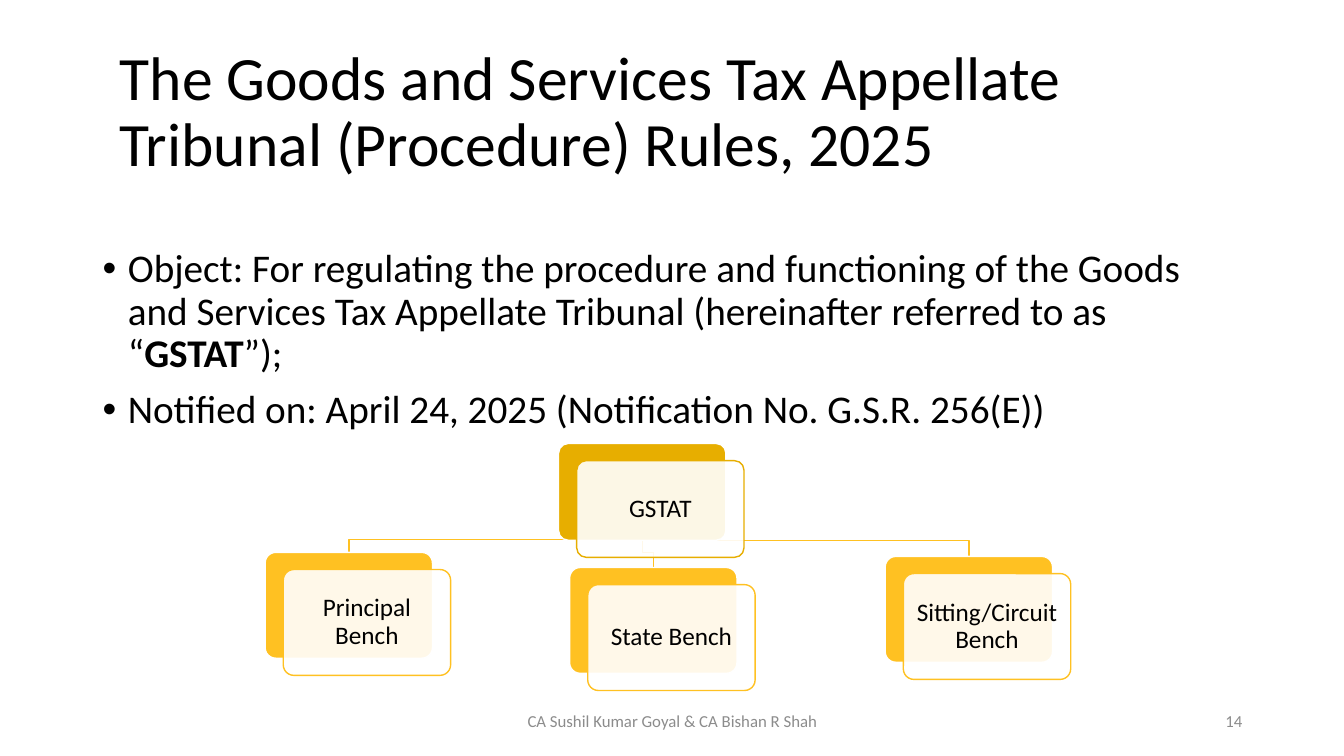
from lxml.etree import SubElement
from pptx import Presentation
from pptx.dml.color import RGBColor
from pptx.enum.shapes import MSO_SHAPE
from pptx.enum.text import MSO_ANCHOR, PP_ALIGN
from pptx.oxml.ns import qn
from pptx.util import Inches, Pt

PX = Inches(1) // 100
GOLD, AMBER, WHITE, BLACK, GREY = "E7AE00", "FFC122", "FFFFFF", "000000", "8C8C8C"
CARD_W, SHIFT_X, SHIFT_Y = 166, 18, 17
ROOT_X, ROOT_Y, ROOT_H = 554, 440, 96
BENCH_H = 105
# name, left, top, height of the link's bend
BENCHES = [
    ("Sitting/Circuit Bench", 878, 552, 536),
    ("State Bench", 565, 563, 548),
    ("Principal Bench", 263, 548, 535),
]
TITLE = "The Goods and Services Tax Appellate Tribunal (Procedure) Rules, 2025"
POINTS = [
    [("Object: For regulating the procedure and functioning of the Goods and "
      "Services Tax Appellate Tribunal (hereinafter referred to as “", False),
     ("GSTAT", True), ("”);", False)],
    [("Notified on: April 24, 2025 (Notification No. G.S.R. 256(E))", False)],
]


def rgb(code):
    return RGBColor.from_string(code)


def apply(target, **values):
    for name, value in values.items():
        setattr(target, name, value)


def write(para, runs, size, color=BLACK, **form):
    """Fill a paragraph with (text, bold) runs."""
    apply(para, **form)
    for text, bold in runs:
        run = para.add_run()
        run.text = text
        apply(run.font, name="Calibri", size=Pt(size), bold=bold)
        run.font.color.rgb = rgb(color)


def add_box(slide, x, y, w, h, **form):
    frame = slide.shapes.add_textbox(x * PX, y * PX, w * PX, h * PX).text_frame
    apply(frame, word_wrap=True, **form)
    return frame


def add_label(slide, box, text, size, color=BLACK, **form):
    frame = add_box(slide, *box, vertical_anchor=MSO_ANCHOR.MIDDLE)
    write(frame.paragraphs[0], [(text, False)], size, color, **form)


def add_points(slide):
    frame = add_box(slide, 92, 185, 1150, 287, margin_top=62 * PX)
    for i, runs in enumerate(POINTS):
        para = frame.add_paragraph() if i else frame.paragraphs[0]
        write(para, runs, 28, line_spacing=0.9, space_before=Pt(10 if i else 0))
        props = para._p.get_or_add_pPr()
        props.set("marL", str(25 * PX))
        props.set("indent", str(-25 * PX))
        SubElement(props, qn("a:buFont"), typeface="Arial")
        SubElement(props, qn("a:buChar"), char="•")


def add_plate(slide, x, y, h, fill, line):
    plate = slide.shapes.add_shape(
        MSO_SHAPE.ROUNDED_RECTANGLE, x * PX, y * PX, CARD_W * PX, h * PX)
    plate.adjustments[0] = 0.1
    plate.shadow.inherit = False
    plate.fill.solid()
    plate.fill.fore_color.rgb = rgb(fill)
    plate.line.color.rgb = rgb(line)
    plate.line.width = Pt(1)
    return plate


def add_card(slide, text, x, y, h, color):
    """Coloured plate with a translucent, labelled plate set off over it."""
    add_plate(slide, x, y, h, color, WHITE)
    front = add_plate(slide, x + SHIFT_X, y + SHIFT_Y, h, WHITE, color)
    tint = front.fill._xPr.find(qn("a:solidFill"))[0]
    SubElement(tint, qn("a:alpha"), val="90000")
    frame = front.text_frame
    sides = ("left", "top", "right", "bottom")
    apply(frame, word_wrap=True, vertical_anchor=MSO_ANCHOR.MIDDLE,
          **{f"margin_{side}": 7 * PX for side in sides})
    write(frame.paragraphs[0], [(text, False)], 18,
          alignment=PP_ALIGN.CENTER, line_spacing=0.9)


def add_link(slide, x, y, bend):
    """Elbow line from under the root card to the top of a bench card."""
    start, end = ROOT_X + CARD_W // 2, x + CARD_W // 2
    pen = slide.shapes.build_freeform(start, 535, scale=PX)
    pen.add_line_segments([(start, bend), (end, bend), (end, y)], close=False)
    link = pen.convert_to_shape()
    link.shadow.inherit = False
    link.fill.background()
    link.line.color.rgb = rgb(AMBER)
    link.line.width = Pt(1)


def main():
    deck = Presentation()
    apply(deck, slide_width=1333 * PX, slide_height=750 * PX)
    slide = deck.slides.add_slide(deck.slide_layouts[6])
    add_label(slide, (109, 40, 1133, 145), TITLE, 44, line_spacing=0.9)
    add_points(slide)
    for _, x, y, bend in BENCHES:
        add_link(slide, x, y, bend)
    add_card(slide, "GSTAT", ROOT_X, ROOT_Y, ROOT_H, GOLD)
    for name, x, y, _ in reversed(BENCHES):
        add_card(slide, name, x, y, BENCH_H, AMBER)
    add_label(slide, (442, 695, 450, 40), "CA Sushil Kumar Goyal & CA Bishan R Shah",
              12, GREY, alignment=PP_ALIGN.CENTER)
    add_label(slide, (942, 695, 300, 40), "14", 12, GREY, alignment=PP_ALIGN.RIGHT)
    deck.save("out.pptx")


if __name__ == "__main__":
    main()
